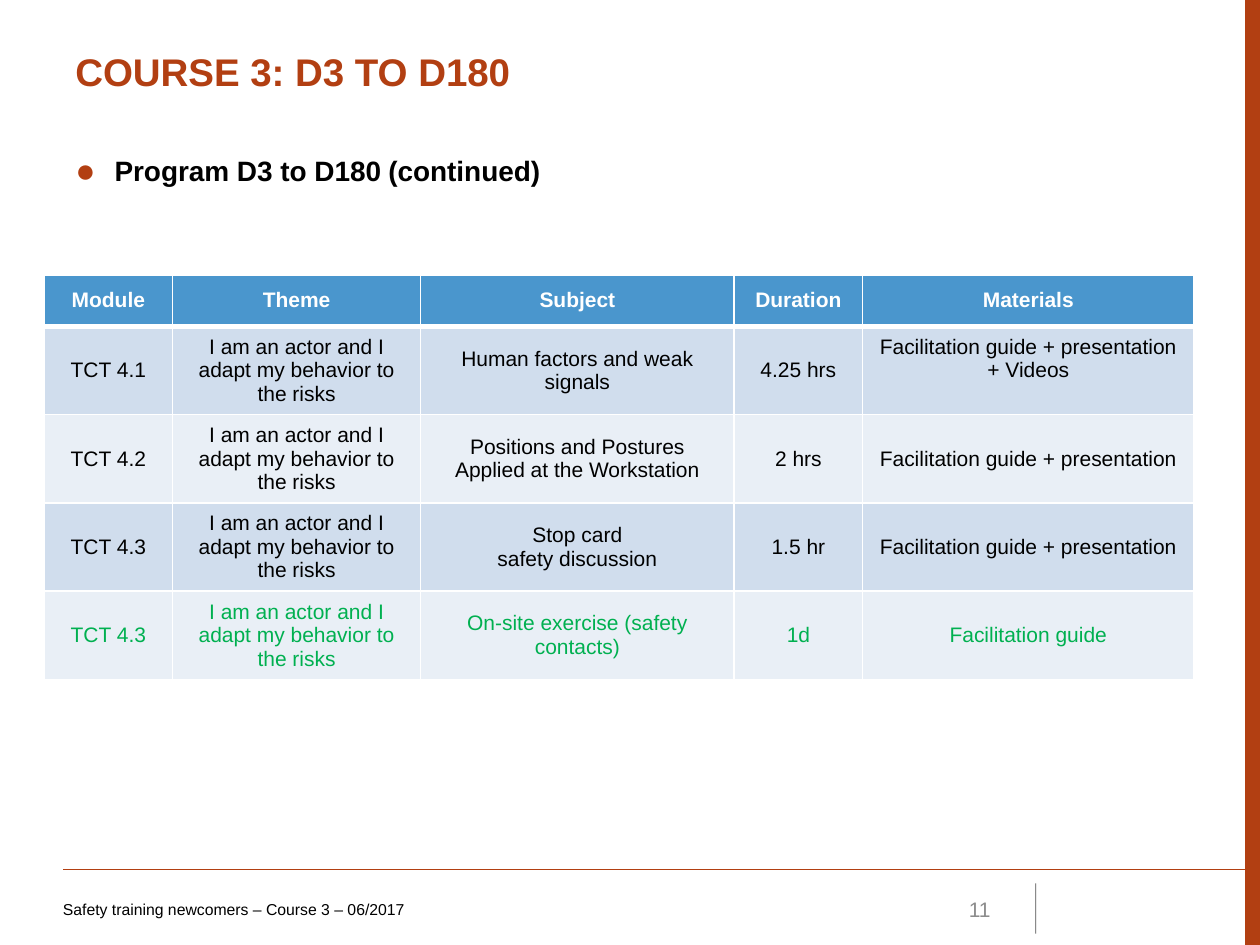
import pptx
import pptx.dml.color
import pptx.enum.shapes
import pptx.enum.text
import pptx.oxml
import pptx.oxml.ns
import pptx.util
from pptx.util import Cm

RUST, BLACK, WHITE, GREEN = "B23F12", "000000", "FFFFFF", "00B050"
ALIGN = pptx.enum.text.PP_ALIGN
MIDDLE = pptx.enum.text.MSO_ANCHOR.MIDDLE
THEME = "I am an actor and I adapt my behavior to the risks"
GUIDE = "Facilitation guide + presentation"
HEAD = ["Module", "Theme", "Subject", "Duration", "Materials"]
ROWS = [
    ["TCT 4.1", THEME, "Human factors and weak signals", "4.25 hrs",
     GUIDE + " + Videos"],
    ["TCT 4.2", THEME, "Positions and Postures Applied at the Workstation",
     "2 hrs", GUIDE],
    ["TCT 4.3", THEME, "Stop card\nsafety discussion", "1.5 hr", GUIDE],
    ["TCT 4.3", THEME, "On-site exercise (safety contacts)", "1d",
     "Facilitation guide"],
]
WIDTHS = [2.59, 5, 6.32, 2.59, 6.68]


def color(code):
    return pptx.dml.color.RGBColor.from_string(code)


def xml(tag, body="", attrs=""):
    space = pptx.oxml.ns.nsdecls("a")
    return pptx.oxml.parse_xml(f"<a:{tag} {space} {attrs}>{body}</a:{tag}>")


def style(obj, values):
    for name, value in values.items():
        setattr(obj, name, value)


def write(para, text, size, code, bold=False):
    run = para.add_run()
    run.text = text
    style(run.font, {"name": "Arial", "size": pptx.util.Pt(size), "bold": bold})
    run.font.color.rgb = color(code)


def add_box(slide, left, top, width, height, **frame):
    box = slide.shapes.add_textbox(Cm(left), Cm(top), Cm(width), Cm(height))
    style(box.text_frame, {"word_wrap": True, **frame})
    return box.text_frame.paragraphs[0]


def add_line(slide, start, end, code, width, alpha=None):
    kind = pptx.enum.shapes.MSO_CONNECTOR.STRAIGHT
    line = slide.shapes.add_connector(kind, *map(Cm, start + end))
    line.line.width = pptx.util.Pt(width)
    line.line.color.rgb = color(code)
    props = line._element.spPr
    if alpha:
        tone = props.find(".//" + pptx.oxml.ns.qn("a:srgbClr"))
        tone.append(xml("alpha", attrs=f'val="{alpha * 1000}"'))
    props.append(xml("effectLst"))


def add_bar(slide):
    kind = pptx.enum.shapes.MSO_SHAPE.RECTANGLE
    bar = slide.shapes.add_shape(kind, Cm(25.1), 0, Cm(0.3), Cm(19.05))
    bar.shadow.inherit = False
    bar.fill.solid()
    bar.fill.fore_color.rgb = color(RUST)
    bar.line.fill.background()


def add_bullet(para, code):
    props = para._p.get_or_add_pPr()
    style_in = Cm(0.79)
    props.set("marL", str(style_in))
    props.set("indent", str(-style_in))
    props.append(xml("buClr", f'<a:srgbClr val="{code}"/>'))
    props.append(xml("buSzPct", attrs='val="120000"'))
    props.append(xml("buFont", attrs='typeface="Arial"'))
    props.append(xml("buChar", attrs='char="●"'))


def fill_cell(cell, text, back, code, head):
    cell.vertical_anchor = MIDDLE
    frame = cell.text_frame
    for i, part in enumerate(text.split("\n")):
        para = frame.add_paragraph() if i else frame.paragraphs[0]
        para.alignment = ALIGN.CENTER
        write(para, part, 12, code, head)
    # Borders come before the fill in the cell properties
    props = cell._tc.get_or_add_tcPr()
    for side in "LRTB":
        width = 3 if head and side == "B" else 1
        paint = f'<a:solidFill><a:srgbClr val="{WHITE}"/></a:solidFill>'
        props.append(xml("ln" + side, paint, f'w="{width * 12700}"'))
    cell.fill.solid()
    cell.fill.fore_color.rgb = color(back)


def add_grid(slide):
    shape = slide.shapes.add_table(len(ROWS) + 1, len(HEAD), Cm(0.89), Cm(5.54),
                                   Cm(sum(WIDTHS)), Cm(7.76))
    table = shape.table
    for col, width in zip(table.columns, WIDTHS):
        col.width = Cm(width)
    for r, row in enumerate([HEAD] + ROWS):
        table.rows[r].height = Cm(1.68 if r else 1.04)
        back = ["E9EFF6", "D0DDED"][r % 2] if r else "4A96CD"
        code = WHITE if r == 0 else GREEN if r == len(ROWS) else BLACK
        for c, text in enumerate(row):
            fill_cell(table.cell(r, c), text, back, code, r == 0)
    # The materials of the first module sit higher in their cell
    table.cell(1, 4).margin_bottom = Cm(0.6)


def main():
    deck = pptx.Presentation()
    style(deck, {"slide_width": Cm(25.4), "slide_height": Cm(19.05)})
    slide = deck.slides.add_slide(deck.slide_layouts[6])

    # Frame of the page
    add_bar(slide)
    add_line(slide, (1.27, 17.53), (25.4, 17.53), RUST, 0.75)
    add_line(slide, (20.88, 17.81), (20.88, 18.82), BLACK, 0.5, alpha=70)

    # Title and heading
    title = add_box(slide, 1.27, 0.76, 22.83, 1.75, margin_top=Cm(0.2))
    write(title, "COURSE 3: D3 TO D180", 22, RUST, True)
    lead = add_box(slide, 1.27, 2.9, 22.83, 1.19, margin_top=Cm(0.2))
    add_bullet(lead, RUST)
    write(lead, "Program D3 to D180", 16, BLACK, True)
    write(lead, " ", 14, BLACK, True)
    write(lead, "(continued)", 16, BLACK, True)

    # Program
    add_grid(slide)

    # Footer
    page = add_box(slide, 18.21, 17.81, 2.01, 1.02, vertical_anchor=MIDDLE)
    page.alignment = ALIGN.RIGHT
    write(page, "11", 12, "8C8C8C")
    foot = add_box(slide, 1.27, 17.81, 15.44, 1.02, vertical_anchor=MIDDLE,
                   margin_left=0)
    write(foot, "Safety training newcomers – Course 3 – 06/2017", 9, BLACK)

    deck.save("out.pptx")


if __name__ == "__main__":
    main()
